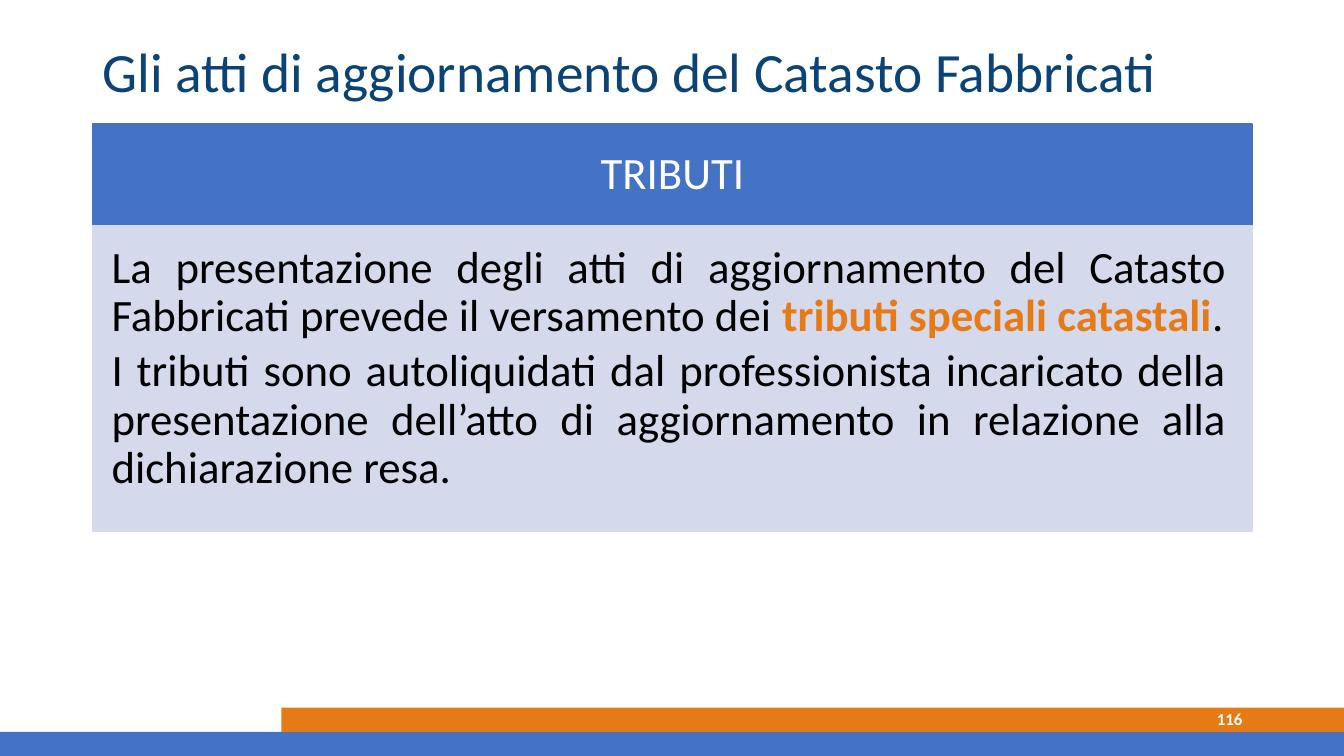
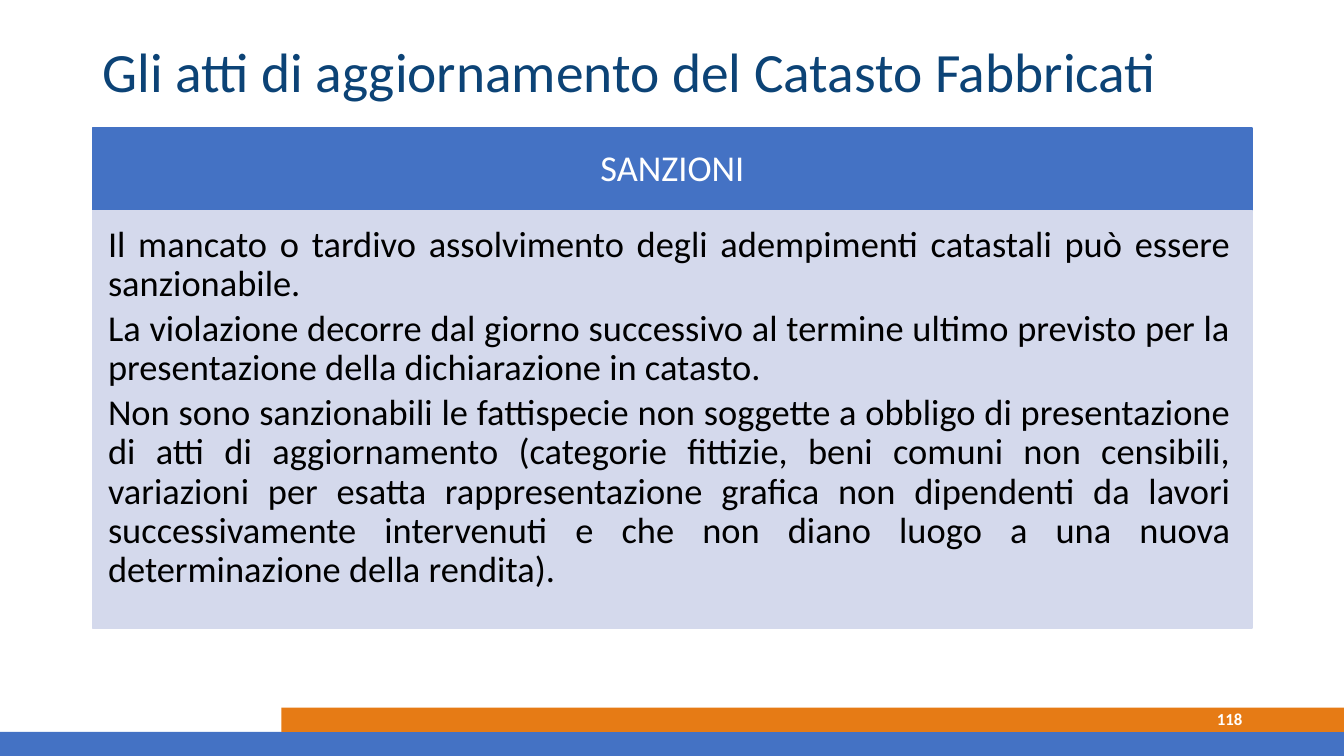
from pptx import Presentation
from pptx.dml.color import RGBColor
from pptx.enum.shapes import MSO_SHAPE
from pptx.enum.text import MSO_ANCHOR, PP_ALIGN
from pptx.util import Inches, Pt

# Content: each paragraph is a list of (text, is highlighted) spans
TITLE = "Gli atti di aggiornamento del Catasto Fabbricati"
SLIDES = [
    {
        "number": "116", "heading": "TRIBUTI", "size": 32,
        "top": 1.23, "heading_height": 1.01, "body_height": 3.03,
        "paragraphs": [
            [("La presentazione degli atti di aggiornamento del Catasto Fabbricati "
              "prevede il versamento dei ", False),
             ("tributi speciali catastali", True), (".", False)],
            [("I tributi sono autoliquidati dal professionista incaricato della "
              "presentazione dell’atto di aggiornamento in relazione alla "
              "dichiarazione resa.", False)],
        ],
    },
    {
        "number": "118", "heading": "SANZIONI", "size": 26,
        "top": 1.27, "heading_height": 0.82, "body_height": 4.14,
        "paragraphs": [
            [("Il mancato o tardivo assolvimento degli adempimenti catastali può "
              "essere sanzionabile.", False)],
            [("La violazione decorre dal giorno successivo al termine ultimo previsto "
              "per la presentazione della dichiarazione in catasto.", False)],
            [("Non sono sanzionabili le fattispecie non soggette a obbligo di "
              "presentazione di atti di aggiornamento (categorie fittizie, beni comuni "
              "non censibili, variazioni per esatta rappresentazione grafica non "
              "dipendenti da lavori successivamente intervenuti e che non diano luogo "
              "a una nuova determinazione della rendita).", False)],
        ],
    },
]

# Shared style
COLORS = {"blue": "4472C4", "orange": "E67B15", "title": "0C4376",
          "panel": "D4D9EC", "white": "FFFFFF", "black": "000000"}
FONT = "Calibri"
WIDTH, HEIGHT = 13.33, 7.5
MARGIN = 0.92
CONTENT_WIDTH = 11.5
BAND = 0.24
ORANGE_LEFT = 2.79
# Insets as shares of the text size: left, top, right, bottom
HEADING_INSETS = (0.56, 0.32, 0.56, 0.32)
BODY_INSETS = (0.42, 0.42, 0.56, 0.64)


def color(name):
    return RGBColor.from_string(COLORS[name])


def add_bar(page, left, top, width, height, fill, line=False):
    bar = page.shapes.add_shape(MSO_SHAPE.RECTANGLE, Inches(left), Inches(top),
                                Inches(width), Inches(height))
    bar.shadow.inherit = False
    bar.fill.solid()
    bar.fill.fore_color.rgb = color(fill)
    if line:
        bar.line.color.rgb = color(fill)
        bar.line.width = Pt(1)
    else:
        bar.line.fill.background()
    return bar


def add_box(page, left, top, width, height):
    return page.shapes.add_textbox(Inches(left), Inches(top),
                                   Inches(width), Inches(height))


def write(box, paragraphs, size, ink, align=PP_ALIGN.LEFT, anchor=MSO_ANCHOR.MIDDLE,
          bold=False, spacing=0.9, after=0, insets=None):
    frame = box.text_frame
    frame.word_wrap = True
    frame.vertical_anchor = anchor
    if insets:
        (frame.margin_left, frame.margin_top,
         frame.margin_right, frame.margin_bottom) = [Pt(share * size) for share in insets]
    for index, spans in enumerate(paragraphs):
        para = frame.paragraphs[0] if index == 0 else frame.add_paragraph()
        para.alignment = align
        para.line_spacing = spacing
        para.space_after = Pt(after * size)
        for text, highlighted in spans:
            span = para.add_run()
            span.text = text
            span.font.name = FONT
            span.font.size = Pt(size)
            span.font.bold = bold or highlighted
            span.font.color.rgb = color("orange" if highlighted else ink)


def add_frame(page, number):
    # Footer bands, page number and title
    add_bar(page, 0, HEIGHT - BAND, WIDTH, BAND, "blue")
    add_bar(page, ORANGE_LEFT, HEIGHT - 2 * BAND, WIDTH - ORANGE_LEFT, BAND, "orange")
    write(add_box(page, 9.42, 6.93, 3, 0.4), [[(number, False)]], 12, "white",
          align=PP_ALIGN.RIGHT, bold=True, spacing=1)
    write(add_box(page, MARGIN, 0.4, CONTENT_WIDTH, 0.67), [[(TITLE, False)]],
          39.6, "title")


def add_panel(page, content):
    # Heading bar with the text panel directly below
    size, top = content["size"], content["top"]
    heading = add_bar(page, MARGIN, top, CONTENT_WIDTH, content["heading_height"],
                      "blue", line=True)
    write(heading, [[(content["heading"], False)]], size, "white",
          align=PP_ALIGN.CENTER, insets=HEADING_INSETS)
    body = add_bar(page, MARGIN, top + content["heading_height"], CONTENT_WIDTH,
                   content["body_height"], "panel", line=True)
    write(body, content["paragraphs"], size, "black", align=PP_ALIGN.JUSTIFY,
          anchor=MSO_ANCHOR.TOP, after=0.15, insets=BODY_INSETS)


def main():
    deck = Presentation()
    deck.slide_width, deck.slide_height = Inches(WIDTH), Inches(HEIGHT)
    for content in SLIDES:
        page = deck.slides.add_slide(deck.slide_layouts[6])
        add_frame(page, content["number"])
        add_panel(page, content)
    deck.save("out.pptx")


if __name__ == "__main__":
    main()
